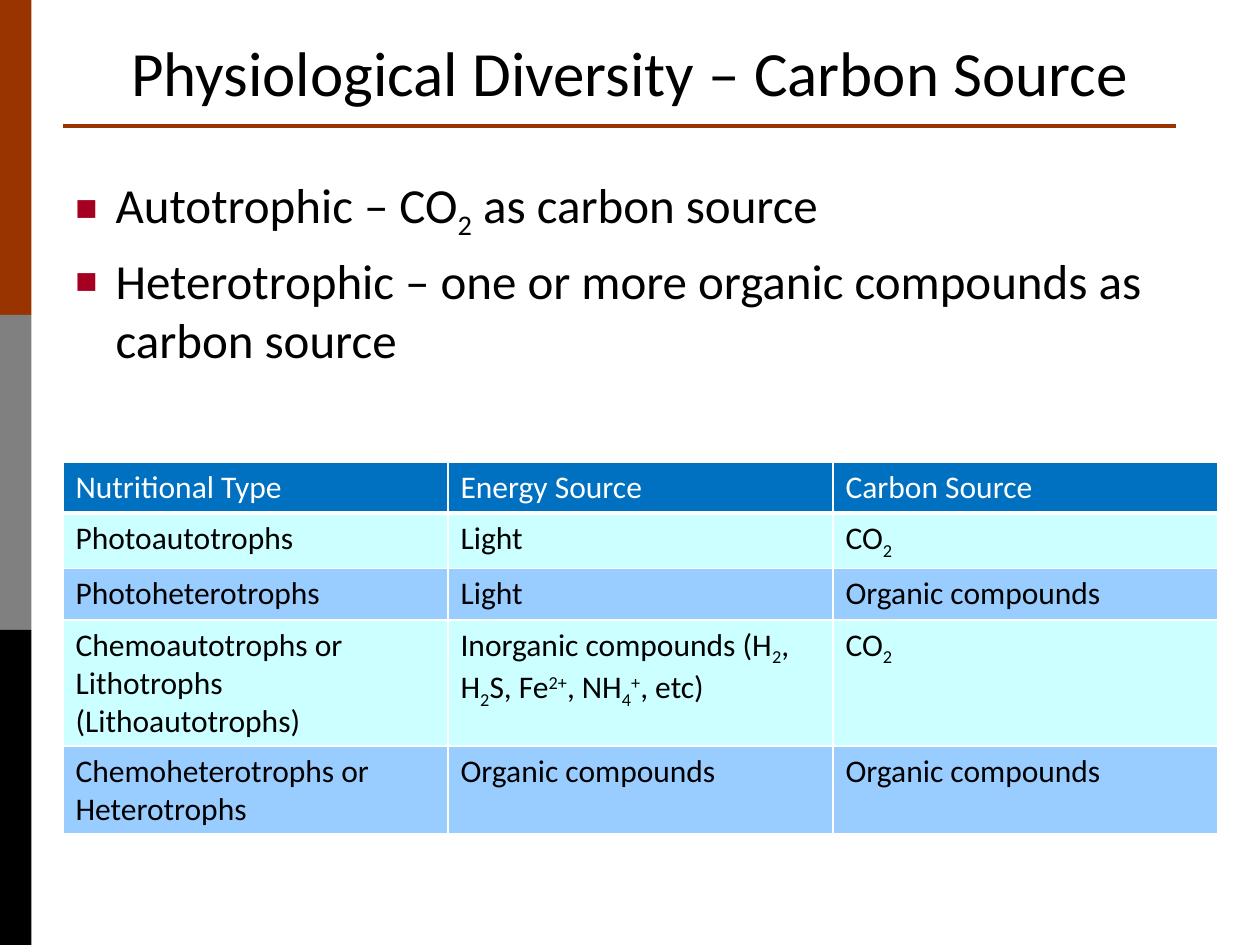
from dataclasses import dataclass

from lxml import etree
from pptx import Presentation
from pptx.dml.color import RGBColor
from pptx.enum.shapes import MSO_CONNECTOR, MSO_SHAPE
from pptx.enum.text import MSO_ANCHOR, PP_ALIGN
from pptx.oxml.ns import qn
from pptx.util import Pt

RECT = MSO_SHAPE.RECTANGLE
STRAIGHT = MSO_CONNECTOR.STRAIGHT
CENTER = PP_ALIGN.CENTER
BOTTOM = MSO_ANCHOR.BOTTOM

FONT = "Calibri"
BLACK = RGBColor(0x00, 0x00, 0x00)
WHITE = RGBColor(0xFF, 0xFF, 0xFF)
RUST = RGBColor(0x99, 0x33, 0x00)
GRAY = RGBColor(0x80, 0x80, 0x80)
CRIMSON = RGBColor(0xA5, 0x00, 0x21)
HEADER_BLUE = RGBColor(0x00, 0x70, 0xC0)
PALE_CYAN = RGBColor(0xCC, 0xFF, 0xFF)
LIGHT_BLUE = RGBColor(0x99, 0xCC, 0xFF)

# Baseline shift in thousandths of a percent, by the mark that opens a part
BASELINES = {"_": "-25000", "^": "30000"}


@dataclass(frozen=True)
class Box:
    left: float
    top: float
    width: float
    height: float

    def lengths(self):
        return [Pt(v) for v in (self.left, self.top, self.width, self.height)]


SIDE_BARS = [
    (Box(0, 180 * i, 18, 180), color) for i, color in enumerate((RUST, GRAY, BLACK))
]
TITLE_BOX = Box(36, 0, 648, 66)
BODY_BOX = Box(36, 96, 648, 386.5)
TABLE_BOX = Box(36, 264, 660, 146)

BULLETS = [
    "Autotrophic – CO|_2| as carbon source",
    "Heterotrophic – one or more organic compounds as carbon source",
]
ROWS = [
    ("Nutritional Type", "Energy Source", "Carbon Source"),
    ("Photoautotrophs", "Light", "CO|_2"),
    ("Photoheterotrophs", "Light", "Organic compounds"),
    (
        "Chemoautotrophs or Lithotrophs (Lithoautotrophs)",
        "Inorganic compounds (H|_2|, H|_2|S, Fe|^2+|, NH|_4|^+|, etc)",
        "CO|_2",
    ),
    ("Chemoheterotrophs or Heterotrophs", "Organic compounds", "Organic compounds"),
]


def write(p, text: str, *, size: float, color: RGBColor = BLACK, align=None) -> None:
    """Fill a paragraph; parts split by | are lowered by _ or raised by ^."""
    p.alignment = align
    for part in text.split("|"):
        shift = BASELINES.get(part[0])
        r = p.add_run()
        r.text = part[1:] if shift else part
        r.font.name = FONT
        r.font.size = Pt(size)
        r.font.color.rgb = color
        if shift:
            r.font._element.set("baseline", shift)


def add_bullet(p) -> None:
    """Give a paragraph a hanging square bullet."""
    pPr = p._p.get_or_add_pPr()
    pPr.set("marL", str(Pt(23)))
    pPr.set("indent", str(-Pt(23)))
    color = etree.SubElement(pPr, qn("a:buClr"))
    etree.SubElement(color, qn("a:srgbClr"), val=str(CRIMSON))
    etree.SubElement(pPr, qn("a:buSzPct"), val="75000")
    etree.SubElement(pPr, qn("a:buFont"), typeface="Arial")
    etree.SubElement(pPr, qn("a:buChar"), char="■")


def add_border(cell, side: str, width: float) -> None:
    ln = etree.SubElement(
        cell._tc.get_or_add_tcPr(), qn(f"a:ln{side}"), w=str(Pt(width))
    )
    fill = etree.SubElement(ln, qn("a:solidFill"))
    etree.SubElement(fill, qn("a:srgbClr"), val=str(WHITE))


def add_bar(slide, box: Box, color: RGBColor) -> None:
    sp = slide.shapes.add_shape(RECT, *box.lengths())
    sp.shadow.inherit = False
    sp.fill.solid()
    sp.fill.fore_color.rgb = color
    sp.line.fill.background()


def add_title_rule(slide) -> None:
    line = slide.shapes.add_connector(STRAIGHT, Pt(36), Pt(72), Pt(672), Pt(72))
    line.line.color.rgb = RUST
    line.line.width = Pt(2.25)
    etree.SubElement(line._element.spPr, qn("a:effectLst"))


def add_text_frame(slide, box: Box):
    tf = slide.shapes.add_textbox(*box.lengths()).text_frame
    tf.word_wrap = True
    return tf


def add_body(slide) -> None:
    tf = add_text_frame(slide, BODY_BOX)
    for i, text in enumerate(BULLETS):
        p = tf.add_paragraph() if i else tf.paragraphs[0]
        add_bullet(p)
        if i:
            p.space_before = Pt(5.6)
        write(p, text, size=28)


def add_nutrition_table(slide) -> None:
    table = slide.shapes.add_table(
        len(ROWS), len(ROWS[0]), *TABLE_BOX.lengths()
    ).table
    for i, texts in enumerate(ROWS):
        if i == 0:
            fill, color = HEADER_BLUE, WHITE
        else:
            fill, color = (PALE_CYAN if i % 2 else LIGHT_BLUE), BLACK
        for j, text in enumerate(texts):
            cell = table.cell(i, j)
            for side in "LRTB":
                heavy = (i, side) in ((0, "B"), (1, "T"))
                add_border(cell, side, 3 if heavy else 1)
            cell.fill.solid()
            cell.fill.fore_color.rgb = fill
            write(cell.text_frame.paragraphs[0], text, size=18, color=color)


def main() -> None:
    prs = Presentation()
    prs.slide_width, prs.slide_height = Pt(720), Pt(540)
    slide = prs.slides.add_slide(prs.slide_layouts[6])
    for box, color in SIDE_BARS:
        add_bar(slide, box, color)
    add_title_rule(slide)
    tf = add_text_frame(slide, TITLE_BOX)
    tf.vertical_anchor = BOTTOM
    write(
        tf.paragraphs[0],
        "Physiological Diversity – Carbon Source",
        size=36,
        align=CENTER,
    )
    add_body(slide)
    add_nutrition_table(slide)
    prs.save("out.pptx")


if __name__ == "__main__":
    main()
